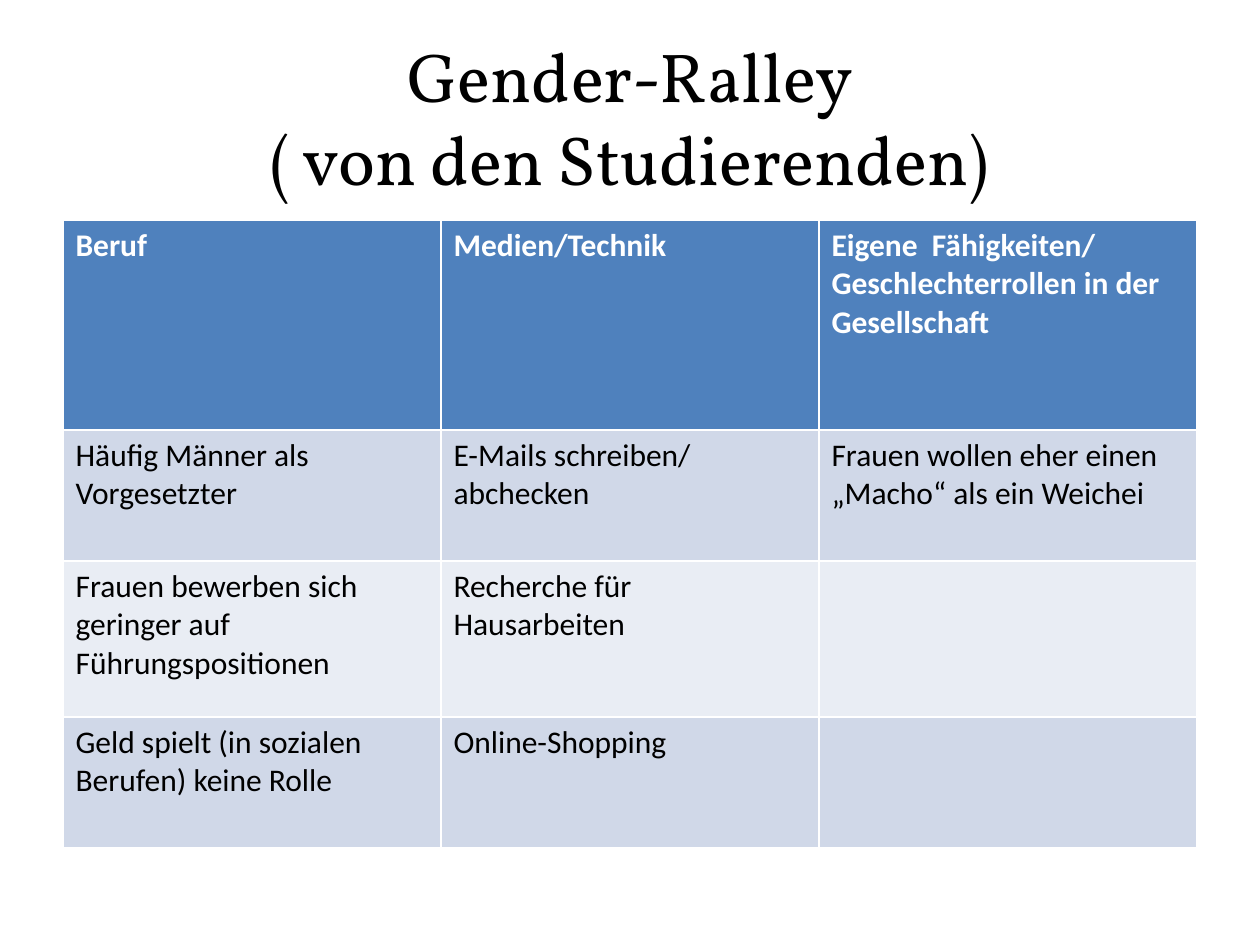
"""Builds a slide with a two-line title and a table of gender topics."""
from pptx import Presentation as Deck
from pptx.dml.color import RGBColor as Rgb
from pptx.enum.text import MSO_ANCHOR as Anchor, PP_ALIGN as Align
from pptx.util import Pt

PX = 914400 // 126
COLORS = {"black": "000000", "white": "FFFFFF", "head": "4F81BD",
          "dark": "D0D8E8", "light": "E9EDF4"}
TITLE = "Gender-Ralley\v( von den Studierenden)"
ROWS = [
    ["Beruf", "Medien/Technik",
     "Eigene  Fähigkeiten/\vGeschlechterrollen in der Gesellschaft"],
    ["Häufig Männer als Vorgesetzter", "E-Mails schreiben/\vabchecken",
     "Frauen wollen eher einen „Macho“ als ein Weichei"],
    ["Frauen bewerben sich geringer auf Führungspositionen",
     "Recherche für Hausarbeiten", ""],
    ["Geld spielt (in sozialen Berufen) keine Rolle", "Online-Shopping", ""],
]
HEIGHTS = [210, 131, 156, 131]
FILLS = ["head", "dark", "light", "dark"]
COL = 378


def px(*nums):
    """Turn px lengths into EMU."""
    return [num * PX for num in nums]


def write(frame, text, size=18, font="Calibri", color="black", bold=False,
          align=Align.LEFT):
    """Put formatted text into a frame."""
    para = frame.paragraphs[0]
    para.text = text
    para.alignment = align
    for run in para.runs:
        run.font.size = Pt(size)
        run.font.name = font
        run.font.bold = bold
        run.font.color.rgb = Rgb.from_string(COLORS[color])


def add_title(slide):
    """Add the centred title."""
    frame = slide.shapes.add_textbox(*px(63, 38, 1134, 157)).text_frame
    frame.word_wrap = True
    frame.vertical_anchor = Anchor.MIDDLE
    write(frame, TITLE, size=39.6, font="Vollkorn", align=Align.CENTER)


def add_grid(slide):
    """Add the table with a header and banded rows."""
    count = len(ROWS[0])
    place = px(63, 220, COL * count, sum(HEIGHTS))
    grid = slide.shapes.add_table(len(ROWS), count, *place).table
    for row, height, fill, texts in zip(grid.rows, HEIGHTS, FILLS, ROWS):
        row.height = height * PX
        head = fill == "head"
        for cell, text in zip(row.cells, texts):
            cell.fill.solid()
            cell.fill.fore_color.rgb = Rgb.from_string(COLORS[fill])
            write(cell.text_frame, text, bold=head,
                  color="white" if head else "black")


def main():
    """Build and save the deck."""
    deck = Deck()
    deck.slide_width, deck.slide_height = px(1260, 945)
    slide = deck.slides.add_slide(deck.slide_layouts[6])
    add_title(slide)
    add_grid(slide)
    deck.save("out.pptx")


if __name__ == "__main__":
    main()
